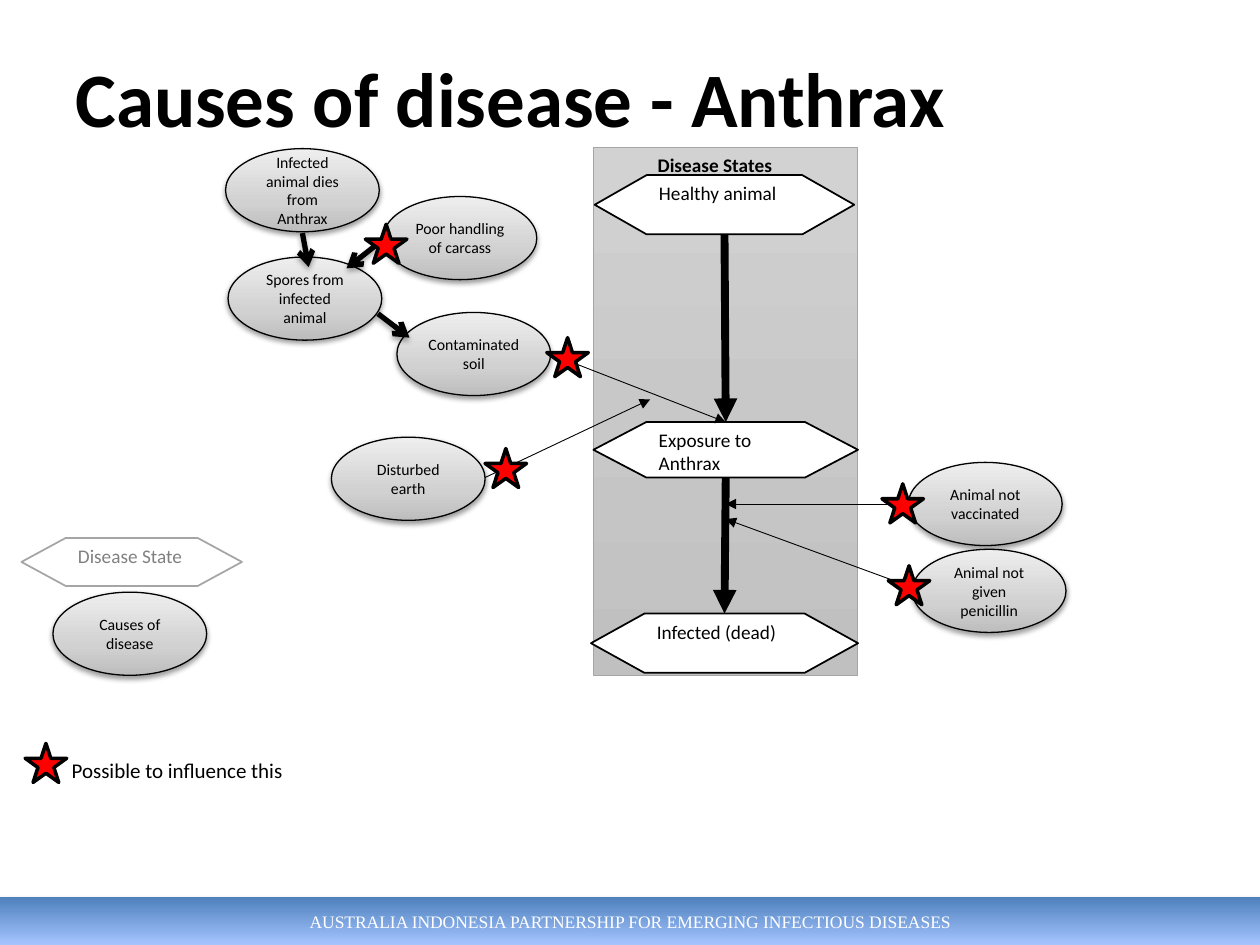
from pptx import Presentation
from pptx.dml.color import RGBColor
from pptx.enum.shapes import MSO_CONNECTOR, MSO_SHAPE
from pptx.enum.text import MSO_ANCHOR as Anchor, PP_ALIGN as Align
from pptx.oxml import parse_xml
from pptx.oxml.ns import nsdecls, qn
from pptx.util import Inches, Pt

BLACK = RGBColor(0x00, 0x00, 0x00)
WHITE = RGBColor(0xFF, 0xFF, 0xFF)
RED = RGBColor(0xFF, 0x00, 0x00)
GRAY = RGBColor(0x80, 0x80, 0x80)
SILVER = RGBColor(0xA5, 0xA5, 0xA5)
OVAL_STOPS = [(0, RGBColor(0xBD, 0xBD, 0xBD)), (35, RGBColor(0xD1, 0xD1, 0xD1)),
              (100, RGBColor(0xEE, 0xEE, 0xEE))]
PANEL_STOPS = [(0, RGBColor(0xD2, 0xD2, 0xD2)), (50, RGBColor(0xC8, 0xC8, 0xC8)),
               (100, RGBColor(0xC0, 0xC0, 0xC0))]
FOOTER_STOPS = [(0, RGBColor(0x4F, 0x81, 0xBD)), (100, RGBColor(0xA4, 0xC4, 0xFF))]

TITLE = "Causes of disease - Anthrax"
FOOTER = "AUSTRALIA INDONESIA PARTNERSHIP FOR EMERGING INFECTIOUS DISEASES"
INSETS = (0.1, 0.05, 0.1, 0.05)
OVAL_SIZE = (1.22, 0.66)
STAR_SIZE = (0.33, 0.31)

CAUSES = [
    ("Disturbed earth", 2.63, 3.47, INSETS),
    ("Infected animal dies from Anthrax", 1.79, 1.18, INSETS),
    ("Poor handling of carcass", 3.04, 1.56, (0.04, 0.04, 0.04, 0.04)),
    ("Spores from infected animal", 1.81, 2.04, INSETS),
    ("Contaminated soil", 3.15, 2.48, (0, 0.05, 0, 0.05)),
    ("Causes of disease", 0.42, 4.7, INSETS),
    ("Animal not vaccinated", 7.21, 3.67, INSETS),
    ("Animal not given penicillin", 7.24, 4.36, INSETS),
]
STATES = [
    ("Healthy animal", (4.72, 1.39, 2.06, 0.47), BLACK, BLACK),
    ("Exposure to Anthrax", (4.71, 3.35, 2.1, 0.44), BLACK, BLACK),
    ("Infected (dead)", (4.69, 4.87, 2.12, 0.47), BLACK, BLACK),
    ("Disease State", (0.17, 4.27, 1.75, 0.38), SILVER, GRAY),
]
CAUSE_ARROWS = [
    ((2.4, 1.85), (2.45, 2.12)),
    ((3, 2.49), (3.25, 2.68)),
    ((3.03, 1.91), (2.75, 2.13)),
]
INFLUENCE_ARROWS = [
    ((7.21, 4), (5.76, 4)),
    ((7.29, 4.68), (5.76, 4.12)),
    ((3.85, 3.79), (5.16, 3.17)),
]
SOIL_EXIT = (4.37, 2.81)
STARS = [(0.2, 5.9), (3.85, 3.56), (4.34, 2.68), (2.9, 1.78), (7, 3.84), (7.05, 4.49)]


def add_shadow(shape, alpha, blur, distance):
    shape.shadow.inherit = False
    effects = shape._element.spPr.find(qn("a:effectLst"))
    effects.append(parse_xml(
        f'<a:outerShdw {nsdecls("a")} blurRad="{Pt(blur)}" dist="{Pt(distance)}" '
        f'dir="5400000" rotWithShape="0"><a:srgbClr val="000000">'
        f'<a:alpha val="{alpha * 1000}"/></a:srgbClr></a:outerShdw>'))


def paint_gradient(shape, stops, angle):
    shape.fill.gradient()
    shape.fill.gradient_angle = angle
    stop_list = shape._element.spPr.find(qn("a:gradFill")).find(qn("a:gsLst"))
    for stop in list(stop_list):
        stop_list.remove(stop)
    for position, color in stops:
        stop_list.append(parse_xml(
            f'<a:gs {nsdecls("a")} pos="{position * 1000}"><a:srgbClr val="{color}"/></a:gs>'))


def add_block(page, kind, bounds, fill=None, line=None, width=1):
    shape = page.shapes.add_shape(kind, *map(Inches, bounds))
    shape.shadow.inherit = False
    if fill is not None:
        shape.fill.solid()
        shape.fill.fore_color.rgb = fill
    if line is None:
        shape.line.fill.background()
    else:
        shape.line.color.rgb = line
        shape.line.width = Pt(width)
    return shape


def write(shape, text, size, color=BLACK, align=Align.LEFT, anchor=Anchor.TOP,
          insets=INSETS, bold=False, font="Calibri"):
    frame = shape.text_frame
    frame.word_wrap = True
    frame.vertical_anchor = anchor
    frame.margin_left, frame.margin_top, frame.margin_right, frame.margin_bottom = map(Inches, insets)
    frame.text = text
    para = frame.paragraphs[0]
    para.alignment = align
    span = para.runs[0].font
    span.name, span.size, span.bold = font, Pt(size), bold
    span.color.rgb = color
    return para


def add_arrow(page, start, end, width, head="triangle"):
    arrow = page.shapes.add_connector(MSO_CONNECTOR.STRAIGHT, *map(Inches, start + end))
    arrow.line.color.rgb = BLACK
    arrow.line.width = Pt(width)
    arrow.line._get_or_add_ln().append(
        parse_xml(f'<a:tailEnd {nsdecls("a")} type="{head}"/>'))
    arrow._element.spPr.append(parse_xml(f'<a:effectLst {nsdecls("a")}/>'))
    return arrow


def main():
    deck = Presentation()
    deck.slide_width, deck.slide_height = Inches(10), Inches(7.5)
    page = deck.slides.add_slide(deck.slide_layouts[6])

    footer = add_block(page, MSO_SHAPE.RECTANGLE, (0, 7.12, 10, 0.38))
    paint_gradient(footer, FOOTER_STOPS, 270)
    add_shadow(footer, 35, 3.1, 1.8)
    write(footer, FOOTER, 10, WHITE, Align.CENTER, Anchor.MIDDLE, font="Times New Roman")

    title = page.shapes.add_textbox(*map(Inches, (0.5, 0.3, 9, 0.93)))
    write(title, TITLE, 44, anchor=Anchor.MIDDLE, bold=True)

    for text, left, top, insets in CAUSES:
        oval = add_block(page, MSO_SHAPE.OVAL, (left, top, *OVAL_SIZE), line=BLACK, width=0.75)
        paint_gradient(oval, OVAL_STOPS, 90)
        add_shadow(oval, 38, 3.1, 1.6)
        write(oval, text, 9, BLACK, Align.CENTER, Anchor.MIDDLE, insets)

    for start, end in CAUSE_ARROWS:
        arrow = add_arrow(page, start, end, 3, "arrow")
        add_shadow(arrow, 35, 3.1, 1.8)

    panel = add_block(page, MSO_SHAPE.RECTANGLE, (4.71, 1.17, 2.1, 4.19), line=SILVER, width=0.5)
    paint_gradient(panel, PANEL_STOPS, 270)
    write(panel, "Disease States", 11, insets=(0.51, 0.05, 0.1, 0.05), bold=True)

    states = []
    for text, bounds, line, color in STATES:
        state = add_block(page, MSO_SHAPE.FLOWCHART_PREPARATION, bounds, WHITE, line)
        write(state, text, 11, color)
        states.append(state)
    healthy, exposed, infected = states[:3]

    for source, target in ((healthy, exposed), (exposed, infected)):
        arrow = add_arrow(page, (0, 0), (0, 0), 4.5)
        arrow.begin_connect(source, 2)
        arrow.end_connect(target, 0)
    add_arrow(page, SOIL_EXIT, (5.76, 3.35), 0.5).end_connect(exposed, 0)
    for start, end in INFLUENCE_ARROWS:
        add_arrow(page, start, end, 0.5)

    legend = add_block(page, MSO_SHAPE.RECTANGLE, (0.47, 5.86, 2.19, 0.36), WHITE)
    write(legend, "Possible to influence this", 12, align=Align.JUSTIFY).line_spacing = 1.5
    for corner in STARS:
        add_block(page, MSO_SHAPE.STAR_5_POINT, (*corner, *STAR_SIZE), RED, BLACK, 2)

    deck.save("out.pptx")


if __name__ == "__main__":
    main()
